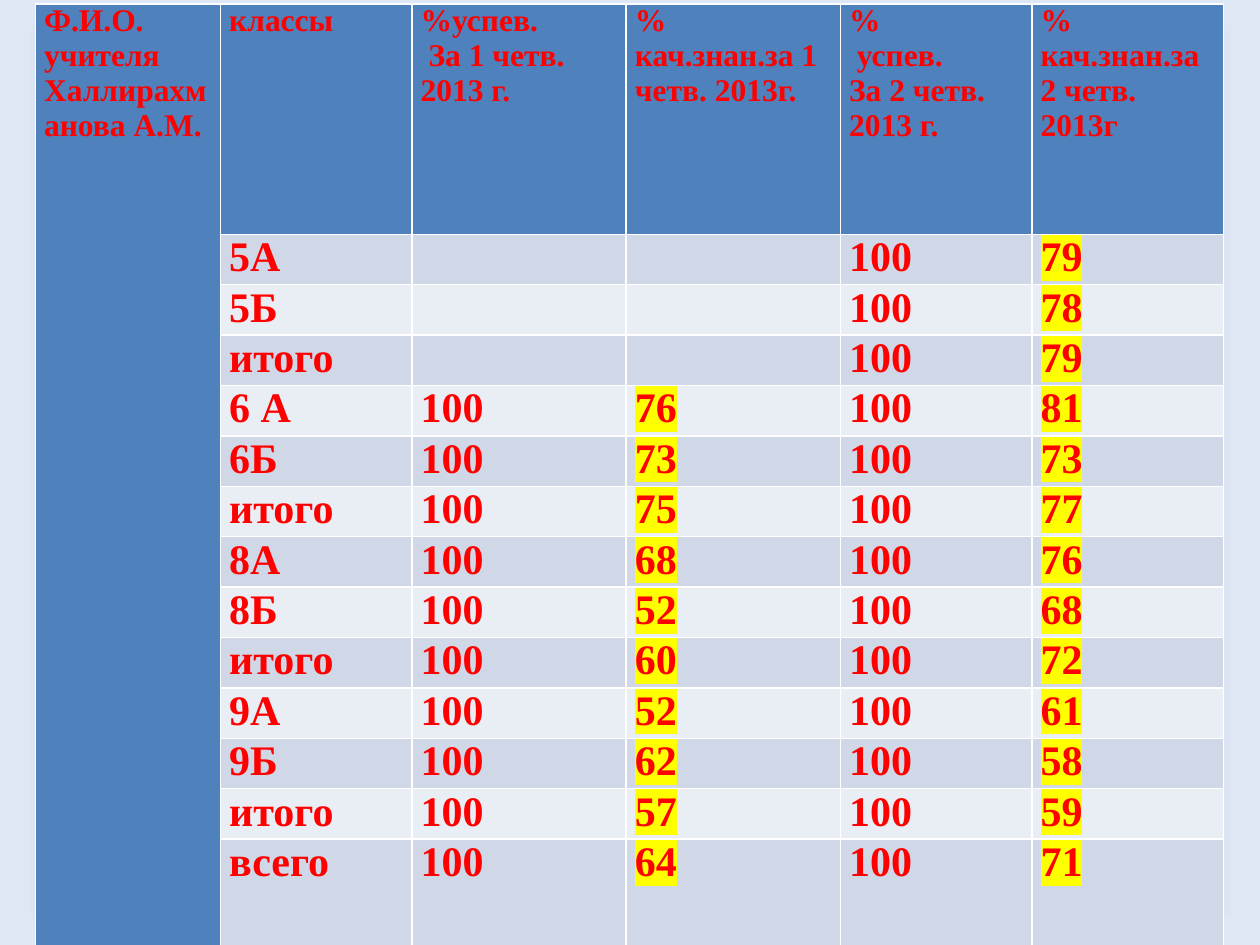
from lxml import etree
from pptx import Presentation
from pptx.dml.color import RGBColor
from pptx.oxml import parse_xml
from pptx.oxml.ns import nsdecls, qn
from pptx.util import Inches, Pt

FONT = "Times New Roman"
RED, YELLOW, BLUE = "FF0000", "FFFF00", "4F81BD"
BANDS = ("D0D8E8", "E9EDF4")
BACKGROUND_STOPS = ((0, "CCC1DA"), (50, "C2D1ED"), (100, "E1E8F5"))
COLUMN_WIDTHS = (1.47, 1.52, 1.7, 1.7, 1.52, 1.52)
HEADER_HEIGHT, CLASS_HEIGHT, TOTAL_HEIGHT = 1.83, 0.4, 0.88
QUALITY_COLUMNS = (3, 5)

HEADERS = (
    "Ф.И.О. учителя\nХаллирахманова А.М.",
    "классы",
    "%успев.\n За 1 четв.\n2013 г.",
    "% кач.знан.за 1 четв. 2013г.",
    "%\n успев.\nЗа 2 четв.\n2013 г.",
    "% кач.знан.за 2 четв. 2013г",
)
RESULTS = (
    ("5А", "", "", "100", "79"),
    ("5Б", "", "", "100", "78"),
    ("итого", "", "", "100", "79"),
    ("6 А", "100", "76", "100", "81"),
    ("6Б", "100", "73", "100", "73"),
    ("итого", "100", "75", "100", "77"),
    ("8А", "100", "68", "100", "76"),
    ("8Б", "100", "52", "100", "68"),
    ("итого", "100", "60", "100", "72"),
    ("9А", "100", "52", "100", "61"),
    ("9Б", "100", "62", "100", "58"),
    ("итого", "100", "57", "100", "59"),
    ("всего", "100", "64", "100", "71"),
)


def rgb(value):
    """Turn a hex string into a colour."""
    return RGBColor.from_string(value)


def paint_background(slide):
    """Fill the background with a gradient that spreads from the centre."""
    slide.background.fill.solid()
    stops = "".join(
        f'<a:gs pos="{percent * 1000}"><a:srgbClr val="{color}"/></a:gs>'
        for percent, color in BACKGROUND_STOPS
    )
    gradient = parse_xml(
        f'<a:gradFill {nsdecls("a")} rotWithShape="1"><a:gsLst>{stops}</a:gsLst>'
        '<a:path path="shape"><a:fillToRect l="50000" t="50000" r="50000" b="50000"/>'
        "</a:path></a:gradFill>"
    )
    properties = slide.element.find(".//" + qn("p:bgPr"))
    properties.replace(properties.find(qn("a:solidFill")), gradient)


def highlight(run, color):
    """Mark a run with a highlight colour."""
    mark = etree.Element(qn("a:highlight"))
    etree.SubElement(mark, qn("a:srgbClr")).set("val", color)
    run.font.fill
    run.font._element.find(qn("a:solidFill")).addnext(mark)


def fill_cell(cell, text, size, fill, marker=None):
    """Write bold red text in a cell and colour the cell."""
    cell.fill.solid()
    cell.fill.fore_color.rgb = rgb(fill)
    cell.margin_left = cell.margin_right = Inches(0.07)
    cell.margin_top = cell.margin_bottom = 0
    if not text:
        return
    cell.text = text
    for paragraph in cell.text_frame.paragraphs:
        for run in paragraph.runs:
            run.font.name = FONT
            run.font.size = Pt(size)
            run.font.bold = True
            run.font.color.rgb = rgb(RED)
            if marker:
                highlight(run, marker)


def add_results_table(slide):
    """Add the table of results by class and quarter."""
    heights = [HEADER_HEIGHT] + [CLASS_HEIGHT] * (len(RESULTS) - 1) + [TOTAL_HEIGHT]
    table = slide.shapes.add_table(
        len(heights), len(COLUMN_WIDTHS), Inches(0.28), Inches(0.03),
        Inches(sum(COLUMN_WIDTHS)), Inches(sum(heights)),
    ).table
    for column, width in zip(table.columns, COLUMN_WIDTHS):
        column.width = Inches(width)
    for row, height in zip(table.rows, heights):
        row.height = Inches(height)

    for column, header in enumerate(HEADERS):
        fill_cell(table.cell(0, column), header, 18, BLUE)
    for row, result in enumerate(RESULTS, start=1):
        for column, value in enumerate(result, start=1):
            marker = YELLOW if column in QUALITY_COLUMNS else None
            fill_cell(table.cell(row, column), value, 24, BANDS[(row - 1) % 2], marker)
    table.cell(0, 0).merge(table.cell(len(RESULTS), 0))


def main():
    """Build the slide and save it."""
    presentation = Presentation()
    presentation.slide_width = Inches(10)
    presentation.slide_height = Inches(7.5)
    slide = presentation.slides.add_slide(presentation.slide_layouts[6])
    paint_background(slide)
    add_results_table(slide)
    presentation.save("out.pptx")


if __name__ == "__main__":
    main()
